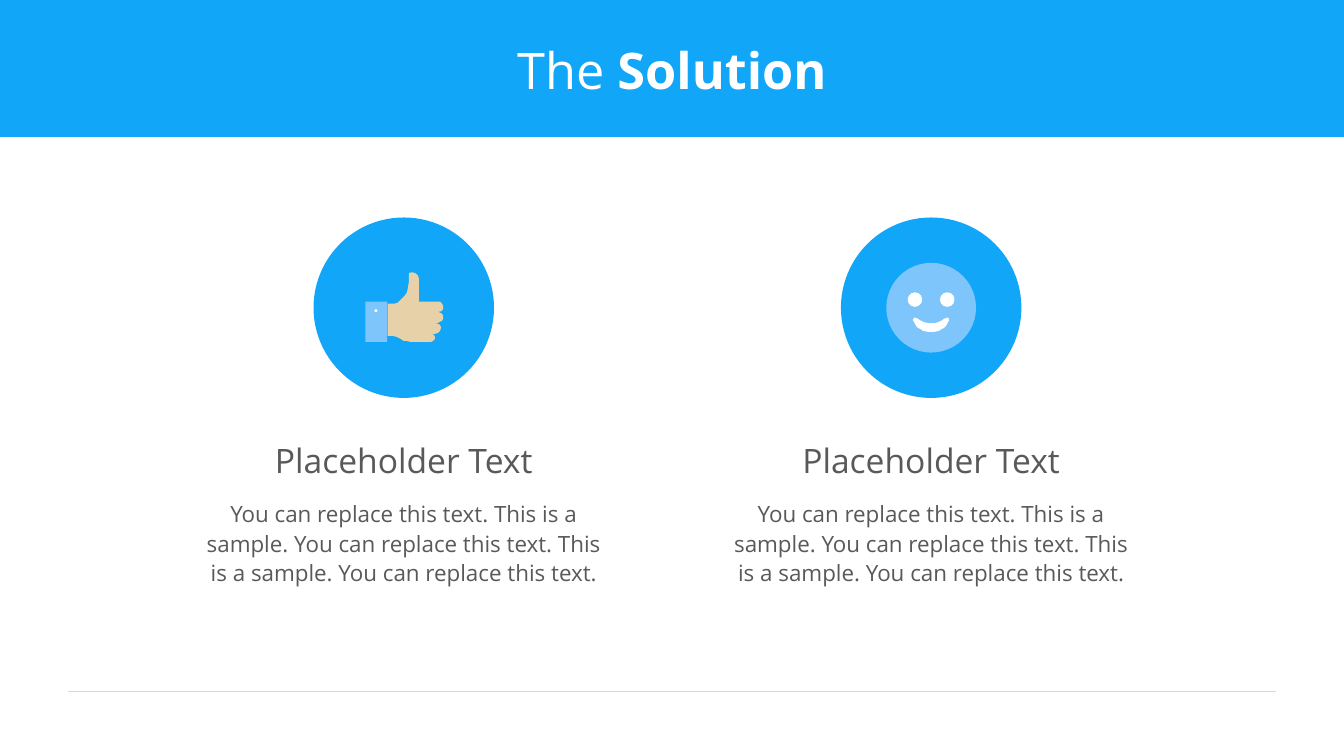
from lxml.etree import SubElement
from pptx import Presentation
from pptx.dml.color import RGBColor
from pptx.enum.shapes import MSO_CONNECTOR, MSO_SHAPE
from pptx.enum.text import MSO_ANCHOR, PP_ALIGN
from pptx.oxml.ns import qn
from pptx.util import Inches, Pt

BLUE = RGBColor(0x12, 0xA6, 0xF8)
LIGHT_BLUE = RGBColor(0x7D, 0xC5, 0xFB)
SKIN = RGBColor(0xE6, 0xD1, 0xA8)
WHITE = RGBColor(0xFF, 0xFF, 0xFF)
GRAY = RGBColor(0x59, 0x59, 0x59)
RULE_GRAY = RGBColor(0xD8, 0xD8, 0xD8)

FONT = "Open Sans"
W, H = Inches(13.33), Inches(7.5)
ICON_UNIT = W / 1333
COLUMN_CENTERS = (30.04, 69.28)
COLUMN_WIDTH = 31.58
ICON_ROW = 40.7
HEADING = "Placeholder Text"
BODY = ("You can replace this text. This is a sample. "
        "You can replace this text. This is a sample. "
        "You can replace this text.")

HAND = [
    (7, 34), (27, 34), (29, 33), (31, 31), (31, 29), (30, 27), (28, 26),
    (31, 26), (34, 25), (36, 23), (37, 20), (36, 17), (34, 16), (31, 15),
    (34, 15), (36, 14), (38, 13), (39, 11), (39, 8), (38, 6), (36, 5),
    (34, 4), (36, 4), (38, 3), (39, 1), (39, -2), (38, -4), (36, -6),
    (34, -6), (15, -6), (15, -29), (14, -32), (12, -34), (9, -35),
    (7, -35), (5, -34), (5, -25), (4, -19), (3, -15), (1, -12), (-2, -9),
    (-4, -7), (-6, -5), (-9, -4), (-16, -4), (-16, 28), (-11, 28),
    (-7, 29), (-3, 31), (0, 33), (3, 33),
]
HALF_SMILE = [
    (0, 24), (3, 24), (6, 23.5), (8, 23), (11, 21), (13, 20), (15, 18),
    (16, 16), (17, 14), (18, 12.5), (17.5, 11), (17, 10), (16, 10),
    (13, 11), (11, 12.5), (8, 14), (5, 15), (2, 15.5), (0, 15.5),
]
SMILE = HALF_SMILE + [(-x, y) for x, y in HALF_SMILE[-2:0:-1]]


def across(share):
    return int(W * share / 100)


def down(share):
    return int(H * share / 100)


def paint(sp, color):
    sp.shadow.inherit = False
    sp.fill.solid()
    sp.fill.fore_color.rgb = color
    sp.line.fill.background()


def add_block(shapes, kind, left, top, width, height, color):
    sp = shapes.add_shape(kind, int(left), int(top), int(width), int(height))
    paint(sp, color)


def add_disc(shapes, center, dx, dy, diameter, color):
    size = diameter * ICON_UNIT
    left = center[0] + dx * ICON_UNIT - size / 2
    top = center[1] + dy * ICON_UNIT - size / 2
    add_block(shapes, MSO_SHAPE.OVAL, left, top, size, size, color)


def add_outline(shapes, center, points, color):
    scaled = [(x * ICON_UNIT, y * ICON_UNIT) for x, y in points]
    builder = shapes.build_freeform(*scaled[0])
    builder.add_line_segments(scaled[1:], close=True)
    paint(builder.convert_to_shape(*center), color)


def add_text(slide, left, top, width, height, runs, size, color, spacing=1.0):
    tf = slide.shapes.add_textbox(across(left), down(top),
                                  across(width), down(height)).text_frame
    tf.word_wrap = True
    p = tf.paragraphs[0]
    p.alignment = PP_ALIGN.CENTER
    p.line_spacing = spacing
    for text, bold in runs:
        r = p.add_run()
        r.text = text
        r.font.name = FONT
        r.font.size = Pt(size)
        r.font.bold = bold
        r.font.color.rgb = color
    return tf


def add_rule(slide):
    line = slide.shapes.add_connector(MSO_CONNECTOR.STRAIGHT, across(5.03),
                                      down(91.47), across(94.97), down(91.47))
    line.line.color.rgb = RULE_GRAY
    line.line.width = Pt(0.75)
    SubElement(line._element.spPr, qn("a:effectLst"))


def add_header(slide):
    add_block(slide.shapes, MSO_SHAPE.RECTANGLE, 0, 0, W, down(18.13), BLUE)
    tf = add_text(slide, 5, 4, 90, 10.4,
                  [("The", False), (" Solution", True)], 36, WHITE)
    tf.vertical_anchor = MSO_ANCHOR.MIDDLE


def draw_thumb(shapes, center):
    add_outline(shapes, center, HAND, SKIN)
    add_block(shapes, MSO_SHAPE.RECTANGLE, center[0] - 38 * ICON_UNIT,
              center[1] - 6 * ICON_UNIT, 21.5 * ICON_UNIT, 40 * ICON_UNIT,
              LIGHT_BLUE)
    add_disc(shapes, center, -27.5, 3, 3, WHITE)


def draw_face(shapes, center):
    add_disc(shapes, center, 0, 0, 89, LIGHT_BLUE)
    add_outline(shapes, center, SMILE, WHITE)
    for dx in (-16, 16):
        add_disc(shapes, center, dx, -8, 14.5, WHITE)


def add_column(slide, middle, draw_icon):
    center = across(middle), down(ICON_ROW)
    left = middle - COLUMN_WIDTH / 2
    add_disc(slide.shapes, center, 0, 0, 179, BLUE)
    add_text(slide, left, 65.2, COLUMN_WIDTH, 13.2, [(BODY, False)],
             16, GRAY, 1.1)
    add_text(slide, left, 57.47, COLUMN_WIDTH, 6.67, [(HEADING, False)],
             24, GRAY)
    draw_icon(slide.shapes.add_group_shape().shapes, center)


def main():
    prs = Presentation()
    prs.slide_width, prs.slide_height = W, H
    slide = prs.slides.add_slide(prs.slide_layouts[6])
    add_rule(slide)
    add_header(slide)
    for middle, draw_icon in zip(COLUMN_CENTERS, (draw_thumb, draw_face)):
        add_column(slide, middle, draw_icon)
    prs.save("out.pptx")


if __name__ == "__main__":
    main()
